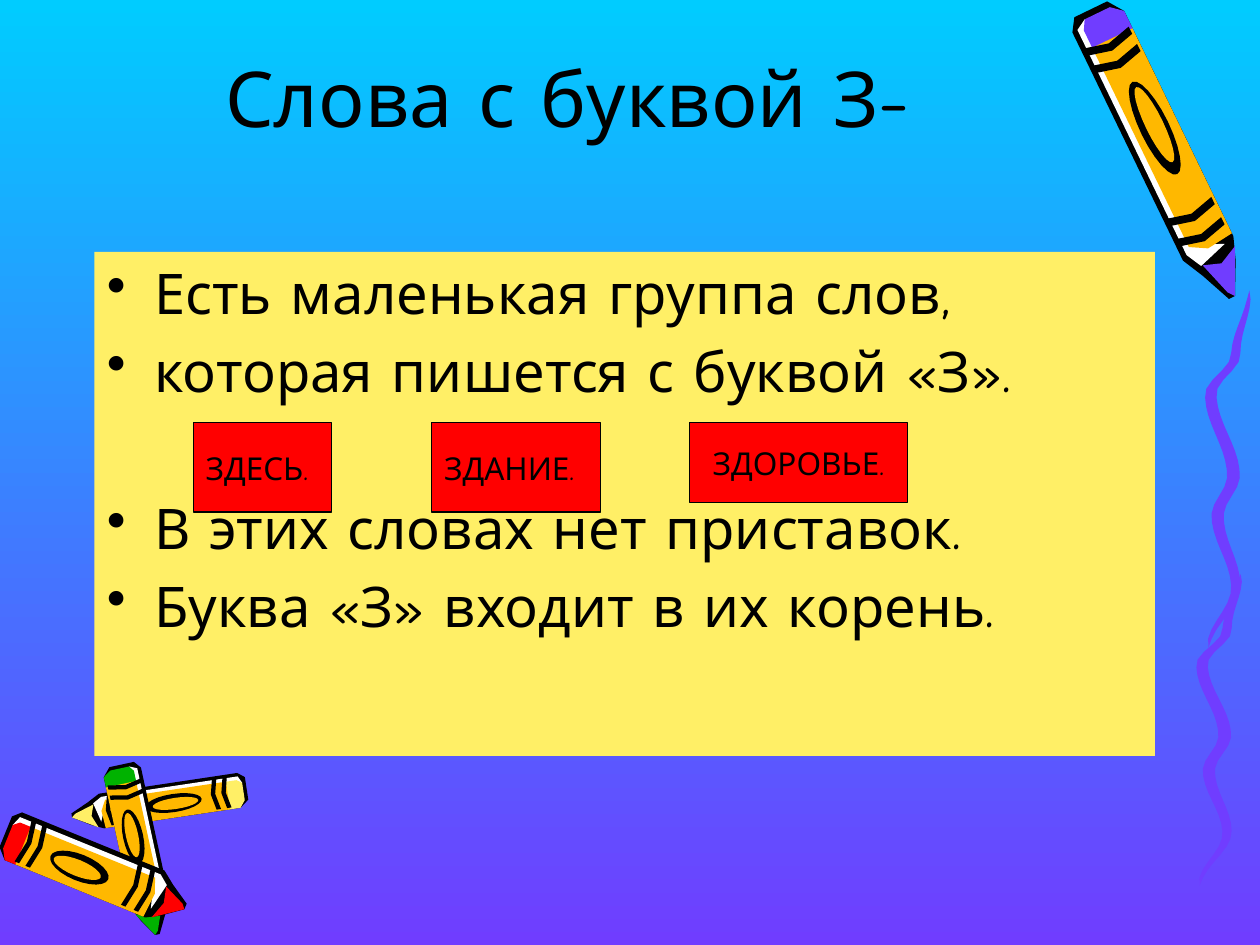
import math
from dataclasses import dataclass

from lxml import etree
from pptx import Presentation
from pptx import util as u
from pptx.dml.color import RGBColor
from pptx.enum import shapes, text
from pptx.oxml import ns

Point = tuple[float, float]


@dataclass(frozen=True)
class Theme:
    font: str = "Comic Neue"
    black: str = "000000"
    white: str = "FFFFFF"
    sky: str = "00CCFF"
    violet: str = "703DFF"
    amber: str = "FFB800"
    yellow: str = "FFEF66"
    red: str = "FF0000"
    green: str = "00B200"
    title: int = 44
    body: int = 32
    label: int = 18


@dataclass(frozen=True)
class Crayon:
    tail: Point
    tip: Point
    width: float
    color: str
    lit_side: int

    def place(self, along: float, across: float) -> Point:
        run, rise = self.tip[0] - self.tail[0], self.tip[1] - self.tail[1]
        offset = across * self.lit_side * self.width / math.hypot(run, rise)
        return (self.tail[0] + along * run - offset * rise,
                self.tail[1] + along * rise + offset * run)


@dataclass(frozen=True)
class Squiggle:
    left: float
    top: float
    width: float
    height: float


@dataclass(frozen=True)
class Card:
    word: str
    left: float
    width: float
    height: float
    align: text.PP_ALIGN = text.PP_ALIGN.LEFT


THEME = Theme()

BIG_CRAYON = Crayon((624, 5), (704, 170), 32, THEME.violet, 1)
SMALL_CRAYONS = [
    Crayon((141, 451), (41, 466), 20, THEME.yellow, 1),
    Crayon((69, 437), (90, 534), 22, THEME.green, -1),
    Crayon((3, 476), (106, 518), 29, THEME.red, -1),
]
SQUIGGLES = [Squiggle(683, 328, 26, 178), Squiggle(688, 166, 26, 204)]
SQUIGGLE_TURNS = [(0, 1), (0.18, 0.7), (0.29, 0.15), (0.52, 0.65), (0.63, 0.3), (0.83, 0.7), (1, 0.1)]
BAND_STARTS = (0.1, 0.16, 0.69, 0.76)

CARDS = [
    Card("ЗДЕСЬ.", 110.4, 79.2, 51),
    Card("ЗДАНИЕ.", 246.7, 96.5, 51),
    Card("ЗДОРОВЬЕ.", 394, 124.5, 45.4, text.PP_ALIGN.CENTER),
]

BODY_LINES = [
    ("Есть маленькая группа слов,", 0),
    ("которая пишется с буквой «З».", 6.4),
    ("В этих словах нет приставок.", 51.2),
    ("Буква «З» входит в их корень.", 6.4),
]


def color(value: str) -> RGBColor:
    return RGBColor.from_string(value)


def draw_polygon(group, points: list[Point], fill: str) -> None:
    corners = [(u.Pt(x), u.Pt(y)) for x, y in points]
    builder = group.shapes.build_freeform(*corners[0])
    builder.add_line_segments(corners[1:], close=True)
    paint(builder.convert_to_shape(), fill)


def paint(shape, fill: str) -> None:
    shape.shadow.inherit = False
    shape.fill.solid()
    shape.fill.fore_color.rgb = color(fill)
    shape.line.fill.background()


def oval(center: Point, radii: Point, steps: int = 24) -> list[Point]:
    angles = [math.tau * step / steps for step in range(steps)]
    return [(center[0] + radii[0] * math.cos(angle), center[1] + radii[1] * math.sin(angle))
            for angle in angles]


def band(start: float) -> list[Point]:
    return [(start, 0.45), (start + 0.02, 0), (start, -0.45),
            (start + 0.025, -0.45), (start + 0.045, 0), (start + 0.025, 0.45)]


def draw_crayon(page, crayon: Crayon) -> None:
    silhouette = [(0, -0.3), (0, 0.35), (0.04, 0.5), (0.83, 0.5), (0.9, 0.3), (1, 0.06),
                  (1, -0.06), (0.9, -0.35), (0.83, -0.5), (0.05, -0.5)]
    highlight = [(0.02, 0.2), (0.04, 0.4), (0.82, 0.4), (0.87, 0.25), (0.84, -0.3), (0.8, 0.2)]
    cap = [(0.02, -0.3), (0.02, 0.2), (0.05, 0.3), (0.12, 0.3), (0.12, -0.5), (0.05, -0.5)]
    shell = [(0.11, 0.3), (0.8, 0.3), (0.83, 0), (0.82, -0.5), (0.11, -0.5)]
    nib = [(0.87, 0.22), (0.98, 0.03), (1, -0.06), (0.86, -0.45), (0.89, -0.1)]
    parts = [
        (silhouette, THEME.black),
        (highlight, THEME.white),
        (cap, crayon.color),
        (shell, THEME.amber),
        (nib, crayon.color),
        (oval((0.42, -0.08), (0.16, 0.26)), THEME.black),
        (oval((0.41, -0.1), (0.13, 0.16)), THEME.amber),
    ]
    parts += [(band(start), THEME.black) for start in BAND_STARTS]
    group = page.shapes.add_group_shape()
    for outline, fill in parts:
        draw_polygon(group, [crayon.place(*point) for point in outline], fill)


def sway(along: float) -> float:
    for (start, before), (end, after) in zip(SQUIGGLE_TURNS, SQUIGGLE_TURNS[1:]):
        if along <= end:
            ease = (1 - math.cos(math.pi * (along - start) / (end - start))) / 2
            return before + (after - before) * ease
    return SQUIGGLE_TURNS[-1][1]


def draw_squiggle(page, squiggle: Squiggle, steps: int = 40) -> None:
    edges = {-1: [], 1: []}
    for step in range(steps + 1):
        along = step / steps
        half = 0.14 * math.sqrt(abs(math.sin(math.pi * along)))
        for side, edge in edges.items():
            edge.append((squiggle.left + squiggle.width * (sway(along) + side * half),
                         squiggle.top + squiggle.height * along))
    draw_polygon(page, edges[-1] + edges[1][::-1], THEME.violet)


def add_panel(page, left: float, top: float, width: float, height: float, fill: str):
    area = [u.Pt(value) for value in (left, top, width, height)]
    box = page.shapes.add_shape(shapes.MSO_SHAPE.RECTANGLE, *area)
    paint(box, fill)
    return box


def write(para, words: str, *, size: float, align: text.PP_ALIGN = text.PP_ALIGN.LEFT,
          before: float = 0, bullet: bool = False) -> None:
    para.alignment = align
    para.space_before = u.Pt(before)
    if bullet:
        props = para._p.get_or_add_pPr()
        props.set("marL", str(u.Pt(27)))
        props.set("indent", str(u.Pt(-27)))
        etree.SubElement(props, ns.qn("a:buFontTx"))
        etree.SubElement(props, ns.qn("a:buChar"), char="•")
    span = para.add_run()
    span.text = words
    span.font.name = THEME.font
    span.font.size = u.Pt(size)
    span.font.color.rgb = color(THEME.black)


def draw_title(page) -> None:
    box = page.shapes.add_textbox(u.Pt(54), u.Pt(12.24), u.Pt(540.72), u.Pt(126))
    frame = box.text_frame
    frame.word_wrap = True
    frame.vertical_anchor = text.MSO_ANCHOR.BOTTOM
    frame.margin_bottom = u.Pt(56.8)
    write(frame.paragraphs[0], "Слова с буквой З-", size=THEME.title, align=text.PP_ALIGN.CENTER)


def draw_body(page) -> None:
    frame = add_panel(page, 54, 144, 606, 288, THEME.yellow).text_frame
    frame.word_wrap = True
    frame.vertical_anchor = text.MSO_ANCHOR.TOP
    for index, (words, before) in enumerate(BODY_LINES):
        para = frame.add_paragraph() if index else frame.paragraphs[0]
        write(para, words, size=THEME.body, before=before, bullet=True)


def draw_card(page, card: Card) -> None:
    box = add_panel(page, card.left, 241.6, card.width, card.height, THEME.red)
    box.line.color.rgb = color(THEME.black)
    box.line.width = u.Pt(0.75)
    frame = box.text_frame
    frame.word_wrap = False
    frame.vertical_anchor = text.MSO_ANCHOR.MIDDLE
    write(frame.paragraphs[0], card.word, size=THEME.label, align=card.align)


def main() -> None:
    deck = Presentation()
    deck.slide_width, deck.slide_height = u.Pt(720), u.Pt(540)
    page = deck.slides.add_slide(deck.slide_layouts[6])
    backdrop = page.background.fill
    backdrop.gradient()
    backdrop.gradient_angle = 270
    for stop, shade in zip(backdrop.gradient_stops, (THEME.sky, THEME.violet)):
        stop.color.rgb = color(shade)
    for crayon in SMALL_CRAYONS:
        draw_crayon(page, crayon)
    for squiggle in SQUIGGLES:
        draw_squiggle(page, squiggle)
    draw_crayon(page, BIG_CRAYON)
    draw_title(page)
    draw_body(page)
    for card in CARDS:
        draw_card(page, card)
    deck.save("out.pptx")


if __name__ == "__main__":
    main()
